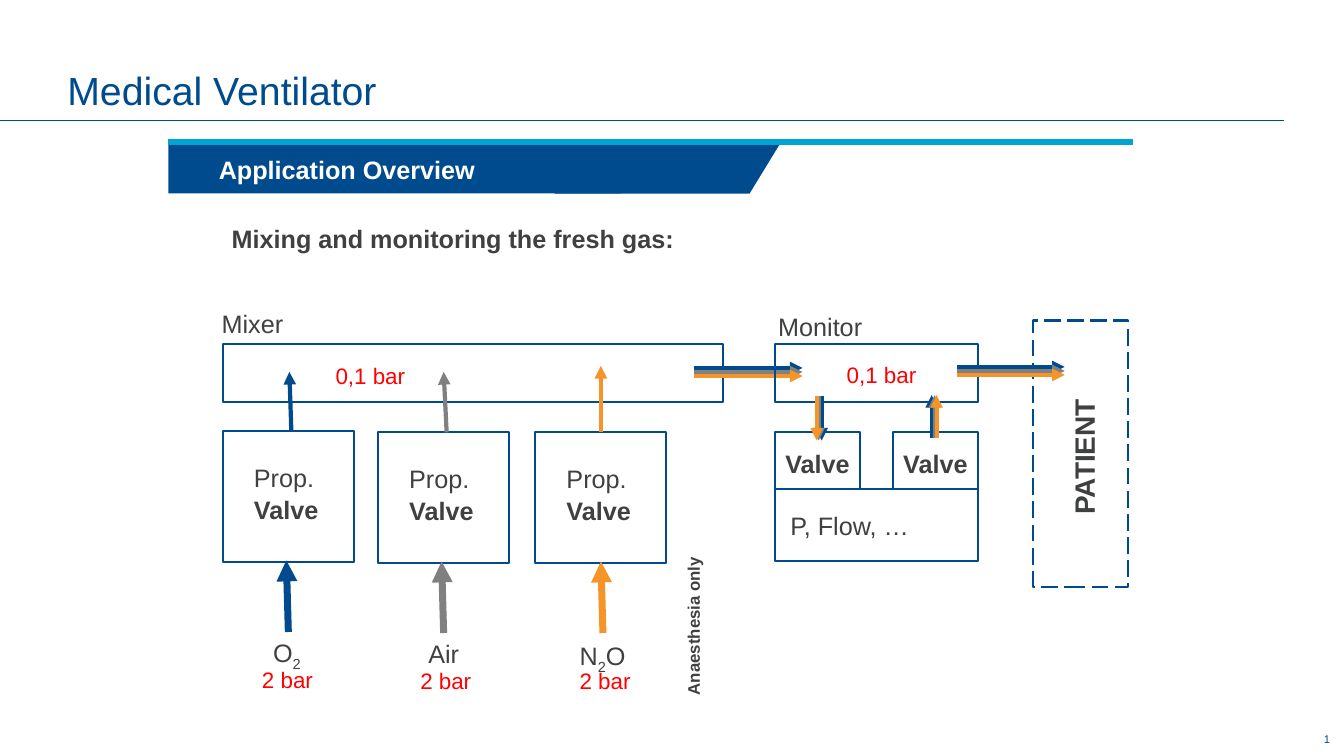
from lxml.etree import SubElement
from pptx import Presentation
from pptx.dml.color import RGBColor
from pptx.enum.dml import MSO_LINE
from pptx.enum.shapes import MSO_CONNECTOR, MSO_SHAPE
from pptx.enum.text import MSO_ANCHOR, MSO_AUTO_SIZE, PP_ALIGN
from pptx.oxml.ns import qn
from pptx.util import Pt

PX = 9144  # EMU per px, 100 px to the inch
FONT = "Arial"
NAVY, CYAN, GRAY, ORANGE = "004B8D", "00A4D2", "808080", "F79428"
INK, RED, WHITE = "3F4040", "FF0000", "FFFFFF"


def color(hex_string):
    return RGBColor.from_string(hex_string)


def emu(*lengths):
    return [round(length * PX) for length in lengths]


def add_box(slide, box, fill=None, kind=MSO_SHAPE.RECTANGLE, dash=None):
    """Filled shape without outline, or an outlined shape without fill."""
    shape = slide.shapes.add_shape(kind, *emu(*box))
    shape.shadow.inherit = False
    if fill:
        shape.fill.solid()
        shape.fill.fore_color.rgb = color(fill)
        shape.line.fill.background()
    else:
        shape.fill.background()
        shape.line.color.rgb = color(NAVY)
        shape.line.width = Pt(1.5)
        if dash:
            shape.line.dash_style = dash
    return shape


def add_line(slide, start, end, line_color, width, arrow=False):
    line = slide.shapes.add_connector(MSO_CONNECTOR.STRAIGHT, *emu(*start, *end))
    line.line.color.rgb = color(line_color)
    line.line.width = Pt(width)
    if arrow:
        SubElement(line.line._get_or_add_ln(), qn("a:tailEnd"), type="triangle")
    SubElement(line._element.spPr, qn("a:effectLst"))


def add_text(slide, box, runs, size=18, text_color=INK, spacing=1.05, wrap=False,
             insets=(10, 5, 10, 5), anchor=MSO_ANCHOR.TOP, align=PP_ALIGN.LEFT, rotation=0):
    """Runs are (text, style) pairs; style is "", "bold", "sub" or "break"."""
    shape = slide.shapes.add_textbox(*emu(*box))
    shape.rotation = rotation
    frame = shape.text_frame
    frame.word_wrap = wrap
    frame.auto_size = MSO_AUTO_SIZE.NONE if wrap else MSO_AUTO_SIZE.SHAPE_TO_FIT_TEXT
    frame.vertical_anchor = anchor
    (frame.margin_left, frame.margin_top,
     frame.margin_right, frame.margin_bottom) = emu(*insets)
    paragraph = frame.paragraphs[0]
    paragraph.alignment = align
    paragraph.line_spacing = spacing
    for text, style in runs:
        run = paragraph.add_run()
        run.text = text
        run.font.name = FONT
        run.font.size = Pt(size)
        run.font.bold = style == "bold"
        run.font.color.rgb = color(text_color)
        if style == "sub":
            run.font._element.set("baseline", "-25000")
        elif style == "break":
            paragraph.add_line_break()


def add_gas_flow(slide, start, end, offsets, axis):
    """Three parallel arrows, one per gas, set apart along the given axis."""
    for gas_color, offset in zip((NAVY, GRAY, ORANGE), offsets):
        shift = (offset, 0) if axis == "x" else (0, offset)
        ends = [[p + s for p, s in zip(point, shift)] for point in (start, end)]
        add_line(slide, *ends, gas_color, 3, arrow=True)


def add_header(slide, box):
    left, top, width, height = box
    add_line(slide, (left, top + 120), (left + 1274, top + 120), NAVY, 0.75)
    add_text(slide, (left + 57, top + 14, 1219, 104), [("Medical Ventilator", "")], 28,
             NAVY, spacing=0.85, wrap=True, anchor=MSO_ANCHOR.BOTTOM)
    add_text(slide, (left + width - 83, top + height - 27, 79, 21), [("1", "")], 8, NAVY,
             spacing=1.0, wrap=True, anchor=MSO_ANCHOR.MIDDLE, align=PP_ALIGN.RIGHT)


def add_banner(slide, box):
    left, top, width, height = box
    slant = add_box(slide, (left + 383, top, 224, height), NAVY, MSO_SHAPE.PARALLELOGRAM)
    slant.adjustments[0] = 0.61
    add_box(slide, (left, top, 449, height), NAVY)
    add_text(slide, (left, top + 5, 557, 40), [("Application Overview", "bold")],
             text_color=WHITE, wrap=True, insets=(50, 5, 10, 5))
    add_line(slide, (left, top - 1), (left + width, top - 1), CYAN, 4.5)
    add_text(slide, (left + 53, top + 73, 487, 92),
             [("Mixing and monitoring the fresh gas:", "bold")],
             spacing=0.9, wrap=True, insets=(10, 10, 10, 5))


def add_gas_lane(slide, box, gas_color, gas, label, pressure, inlet, outlet):
    """Proportional valve with its gas supply below and its outlet above."""
    left, top, width, height = box
    label_left, label_top, label_width = label
    add_box(slide, box)
    add_text(slide, (left + 21, top + 24, 85, 72), [("Prop.", "break"), ("Valve", "bold")])
    add_line(slide, (left + inlet, top + 199), (left + inlet - 2, top + 128),
             gas_color, 5, arrow=True)
    outlet_from, outlet_to, outlet_top = outlet
    add_line(slide, (left + outlet_from, top), (left + outlet_to, top - outlet_top),
             gas_color, 3, arrow=True)
    add_text(slide, (left + label_left, top + label_top, label_width, 40), gas)
    add_text(slide, (left + pressure, top + 227, 71, 36), [("2 bar", "")], 16, RED)


def add_mixer(slide, box):
    left, top, width, height = box
    add_text(slide, (left - 11, top - 42, 82, 40), [("Mixer", "")])
    add_box(slide, box)
    add_text(slide, (left + 102, top + 12, 90, 36), [("0,1 bar", "")], 16, RED)
    lanes = [
        (0, 87, NAVY, [("O", ""), ("2", "sub")], (40, 198, 49), 29, 65, (68, 66, 59)),
        (154, 88, GRAY, [("Air", "")], (40, 198, 51), 32, 65, (68, 65, 60)),
        (310, 88, ORANGE, [("N", ""), ("2", "sub"), ("O", "")], (34, 200, 67), 34, 67,
         (65, 65, 66)),
    ]
    for lane_left, lane_top, *lane in lanes:
        add_gas_lane(slide, (left + lane_left, top + lane_top, 130, 130), *lane)
    add_text(slide, (left + 386, top + 264, 159, 30), [("Anaesthesia only", "bold")], 12,
             rotation=270)
    add_gas_flow(slide, (left + 467, top + 24), (left + 575, top + 24), (0, 4, 8), "y")


def add_monitor(slide, box):
    left, top, width, height = box
    add_text(slide, (left - 7, top - 39, 104, 40), [("Monitor", "")])
    add_box(slide, box)
    add_text(slide, (left + 61, top + 11, 90, 36), [("0,1 bar", "")], 16, RED)
    # Two valves on top of the sensor block
    for valve_left in (left, left + width - 84):
        add_box(slide, (valve_left, top + 88, 84, 56))
        add_text(slide, (valve_left, top + 97, 85, 40), [("Valve", "bold")])
    add_box(slide, (left, top + 144, width, 72))
    add_text(slide, (left + 5, top + 159, 139, 40), [("P, Flow, …", "")])
    # Gas flows to the patient, up from and down to the valves
    add_gas_flow(slide, (left + 180, top + 23), (left + 287, top + 23), (0, 4, 8), "y")
    add_gas_flow(slide, (left + 155, top + 94), (left + 155, top + 51), (0, 3, 5), "x")
    add_gas_flow(slide, (left + 46, top + 52), (left + 46, top + 96), (0, -3, -5), "x")


def add_patient(slide, box):
    left, top, width, height = box
    add_box(slide, box, dash=MSO_LINE.LONG_DASH)
    add_text(slide, (left - 20, top + 113, 136, 43), [("PATIENT", "bold")], 20, rotation=270)


def main():
    presentation = Presentation()
    presentation.slide_width, presentation.slide_height = emu(1333, 750)
    slide = presentation.slides.add_slide(presentation.slide_layouts[6])
    add_header(slide, (0, 0, 1333, 750))
    add_banner(slide, (167, 142, 957, 50))
    add_mixer(slide, (221, 341, 496, 58))
    add_patient(slide, (1025, 318, 94, 264))
    add_monitor(slide, (769, 341, 201, 58))
    presentation.save("out.pptx")


if __name__ == "__main__":
    main()
